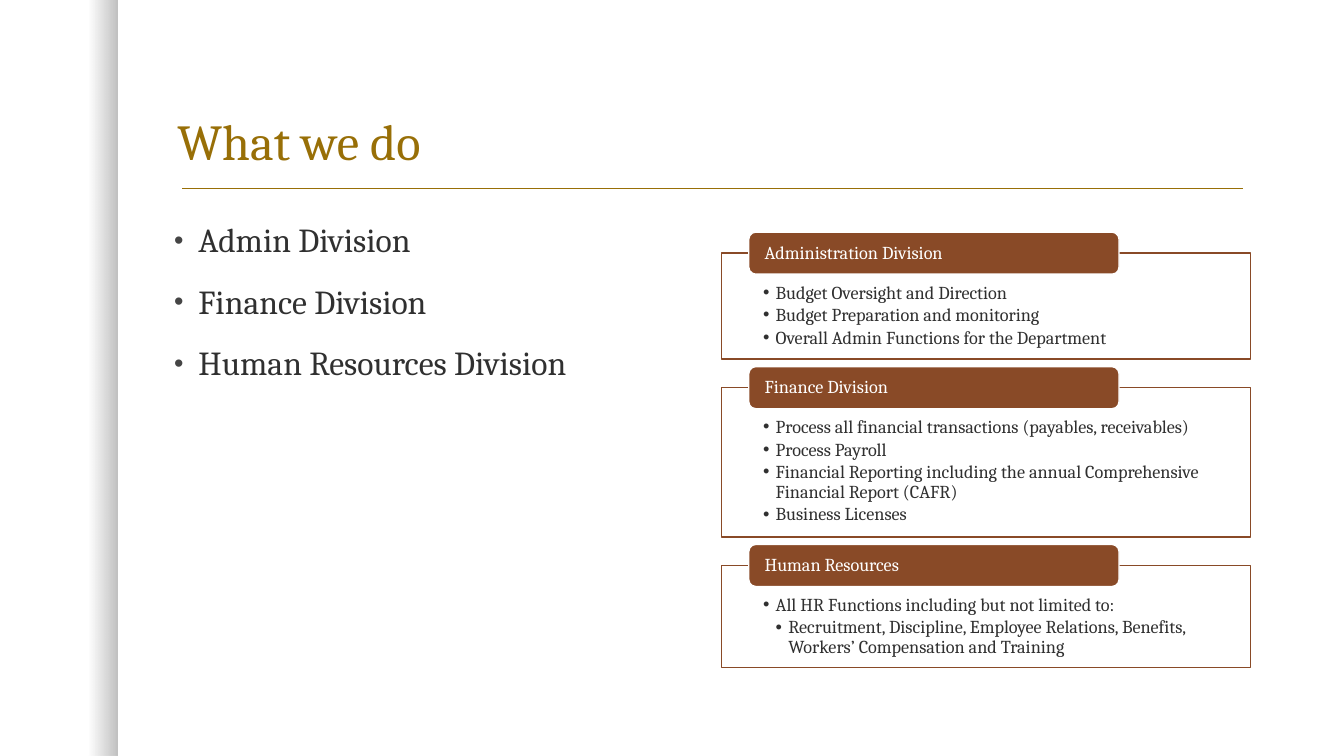
from dataclasses import dataclass

import pptx
import pptx.dml.color
import pptx.enum.dml
import pptx.enum.shapes
import pptx.enum.text
import pptx.oxml
import pptx.oxml.ns
import pptx.util

Cm = pptx.util.Cm
Pt = pptx.util.Pt


@dataclass(frozen=True)
class Theme:
    font: str = "Cambria"
    gold: str = "986F07"
    brown: str = "894A27"
    ink: str = "303030"
    bullet: str = "454545"
    white: str = "FFFFFF"
    black: str = "000000"
    title_size: float = 36
    body_size: float = 24
    panel_size: float = 13


THEME = Theme()
DIVISIONS = ["Admin Division", "Finance Division", "Human Resources Division"]
PANELS = [
    ("Administration Division", 2.67, [
        (1, "Budget Oversight and Direction"),
        (1, "Budget Preparation and monitoring"),
        (1, "Overall Admin Functions for the Department"),
    ]),
    ("Finance Division", 3.76, [
        (1, "Process all financial transactions (payables, receivables)"),
        (1, "Process Payroll"),
        (1, "Financial Reporting including the annual Comprehensive Financial Report (CAFR)"),
        (1, "Business Licenses"),
    ]),
    ("Human Resources", 2.57, [
        (1, "All HR Functions including but not limited to:"),
        (2, "Recruitment, Discipline, Employee Relations, Benefits, Workers’ Compensation and Training"),
    ]),
]


def rgb(color):
    return pptx.dml.color.RGBColor.from_string(color)


def add_xml(parent, tag, **attributes):
    element = pptx.oxml.parse_xml(f"<a:{tag} {pptx.oxml.ns.nsdecls('a')}/>")
    for name, value in attributes.items():
        element.set(name, str(value))
    parent.append(element)
    return element


def add_bullet(paragraph, margin, hanging, color, percent):
    properties = paragraph._p.get_or_add_pPr()
    properties.set("marL", str(Cm(margin)))
    properties.set("indent", str(-Cm(hanging)))
    add_xml(add_xml(properties, "buClr"), "srgbClr", val=color)
    add_xml(properties, "buSzPct", val=percent * 1000)
    add_xml(properties, "buFont", typeface="Arial")
    add_xml(properties, "buChar", char="•")


def write_text(frame, text, size, color, level=0, before=0, after=0, bullet=None):
    paragraph = frame.paragraphs[0]
    if paragraph.runs:
        paragraph = frame.add_paragraph()
    else:
        before = 0
    paragraph.level = level
    if bullet:
        add_bullet(paragraph, *bullet)
    paragraph.alignment = pptx.enum.text.PP_ALIGN.LEFT
    paragraph.line_spacing = 0.9
    paragraph.space_before = Pt(before)
    paragraph.space_after = Pt(after)
    run = paragraph.add_run()
    run.text = text
    run.font.name = THEME.font
    run.font.size = Pt(size)
    run.font.color.rgb = rgb(color)


def set_frame(frame, anchor, insets):
    frame.word_wrap = True
    frame.auto_size = pptx.enum.text.MSO_AUTO_SIZE.NONE
    frame.vertical_anchor = anchor
    frame.margin_left, frame.margin_top, frame.margin_right, frame.margin_bottom = map(Cm, insets)


def place(shape, left, top, width, height):
    shape.left, shape.top, shape.width, shape.height = map(Cm, (left, top, width, height))


def add_box(slide, kind, box, fill, line):
    shape = slide.shapes.add_shape(kind, *map(Cm, box))
    shape.shadow.inherit = False
    shape.fill.solid()
    shape.fill.fore_color.rgb = rgb(fill)
    shape.line.color.rgb = rgb(line)
    shape.line.width = Pt(1)
    return shape


def build_edge(slide, left, top, width, height):
    edge = slide.shapes.add_shape(
        pptx.enum.shapes.MSO_SHAPE.RECTANGLE, *map(Cm, (left, top, width, height)))
    edge.shadow.inherit = False
    edge.line.fill.background()
    edge.fill.gradient()
    edge.fill.gradient_angle = 0
    for stop, (position, opacity) in zip(edge.fill.gradient_stops, [(0.75, 0), (1, 25)]):
        stop.position = position
        stop.color.rgb = rgb(THEME.black)
        color = stop._gs.find(pptx.oxml.ns.qn("a:srgbClr"))
        add_xml(color, "alpha", val=opacity * 1000)


def build_title(slide, left, top, width, height):
    title = slide.shapes.title
    place(title, left, top, width, height)
    set_frame(title.text_frame, pptx.enum.text.MSO_ANCHOR.BOTTOM, (0.25, 0.13, 0.25, 0.13))
    write_text(title.text_frame, "What we do", THEME.title_size, THEME.gold)
    rule_top = Cm(top + height + 0.3)
    rule = slide.shapes.add_connector(
        pptx.enum.shapes.MSO_CONNECTOR.STRAIGHT,
        Cm(left + 0.38), rule_top, Cm(left + width - 0.2), rule_top)
    rule.line.color.rgb = rgb(THEME.gold)
    rule.line.width = Pt(1)
    add_xml(rule._element.spPr, "effectLst")


def build_division_list(slide, left, top, width, height):
    body = slide.placeholders[1]
    place(body, left, top, width, height)
    set_frame(body.text_frame, pptx.enum.text.MSO_ANCHOR.TOP, (0.25, 0.13, 0.25, 0.13))
    for division in DIVISIONS:
        write_text(body.text_frame, division, THEME.body_size, THEME.ink,
                   before=18, bullet=(0.61, 0.61, THEME.bullet, 80))


def build_panel(slide, left, top, width, height, heading, items):
    panel = add_box(slide, pptx.enum.shapes.MSO_SHAPE.RECTANGLE,
                    (left, top, width, height), THEME.white, THEME.brown)
    set_frame(panel.text_frame, pptx.enum.text.MSO_ANCHOR.TOP, (1.04, 0.76, 1.04, 0.25))
    for level, text in items:
        write_text(panel.text_frame, text, THEME.panel_size, THEME.ink, level=level,
                   after=2, bullet=(0.32 * level, 0.32, THEME.ink, 100))
    tab = add_box(slide, pptx.enum.shapes.MSO_SHAPE.ROUNDED_RECTANGLE,
                  (left + 0.68, top - 0.53, width * 0.7, 1.06), THEME.brown, THEME.white)
    set_frame(tab.text_frame, pptx.enum.text.MSO_ANCHOR.MIDDLE, (0.35, 0, 0.35, 0))
    write_text(tab.text_frame, heading, THEME.panel_size, THEME.white)


def build_panels(slide, left, top, width, gap):
    for heading, height, items in PANELS:
        build_panel(slide, left, top, width, height, heading, items)
        top += height + gap


def main():
    presentation = pptx.Presentation()
    presentation.slide_width = Cm(33.87)
    presentation.slide_height = Cm(19.05)
    slide = presentation.slides.add_slide(presentation.slide_layouts[1])
    build_edge(slide, 0, 0, 2.95, 19.05)
    build_title(slide, 4.22, 1.07, 27.3, 3.38)
    build_division_list(slide, 4.14, 5.51, 13.33, 11.63)
    build_panels(slide, 18.19, 6.38, 13.33, 0.72)
    presentation.save("out.pptx")


if __name__ == "__main__":
    main()
